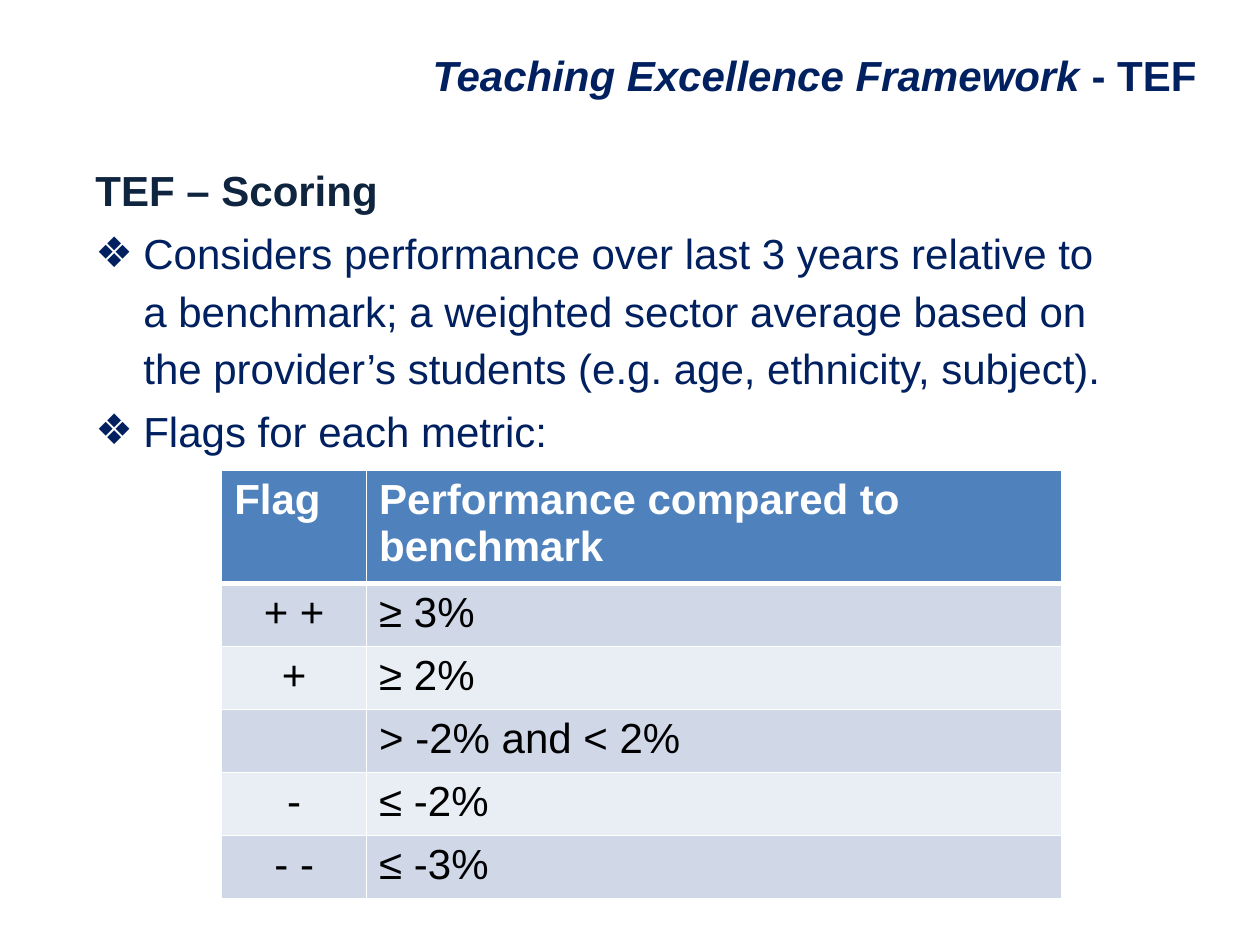
from lxml import etree
from pptx import Presentation
from pptx.dml.color import RGBColor
from pptx.enum.text import MSO_ANCHOR, PP_ALIGN
from pptx.oxml.ns import qn
from pptx.util import Inches, Pt

LEFT, CENTER = PP_ALIGN.LEFT, PP_ALIGN.CENTER
TOP = MSO_ANCHOR.TOP
NAVY, DARK, BLACK, WHITE = "002060", "0F243E", "000000", "FFFFFF"
HEADER_FILL = "4F81BD"
BAND_FILLS = ("D0D8E8", "E9EDF4")

FLAG_ROWS = [
    ("Flag", "Performance compared to benchmark"),
    ("+ +", "≥ 3%"),
    ("+", "≥ 2%"),
    ("", "> -2% and < 2%"),
    ("-", "≤ -2%"),
    ("- -", "≤ -3%"),
]


def rgb(value):
    return RGBColor.from_string(value)


class SlideBuilder:
    """Holds the text style and the slide being filled."""

    font_name = "Arial"
    font_size = Pt(24)

    def __init__(self, slide):
        self.slide = slide

    def text_box(self, left, top, width, height):
        shape = self.slide.shapes.add_textbox(
            Inches(left), Inches(top), Inches(width), Inches(height))
        shape.text_frame.word_wrap = True
        return shape.text_frame

    def run(self, paragraph, text, color, bold=False, italic=False):
        run = paragraph.add_run()
        run.text = text
        font = run.font
        font.name, font.size = self.font_name, self.font_size
        font.bold, font.italic = bold, italic
        font.color.rgb = rgb(color)

    def bullet(self, text_frame, text):
        paragraph = text_frame.add_paragraph()
        paragraph.line_spacing = 1.14
        paragraph.space_before = Pt(3)
        properties = paragraph._p.get_or_add_pPr()
        properties.set("marL", str(Inches(0.38)))
        properties.set("indent", str(-Inches(0.38)))
        etree.SubElement(properties, qn("a:buFont"), typeface=self.font_name)
        etree.SubElement(properties, qn("a:buChar"), char="❖")
        self.run(paragraph, text, NAVY)

    def cell_borders(self, cell, bottom_width, top_width):
        properties = cell._tc.get_or_add_tcPr()
        widths = (("L", 1), ("R", 1), ("T", top_width), ("B", bottom_width))
        for side, width in widths:
            line = etree.SubElement(properties, qn(f"a:ln{side}"), w=str(Pt(width)))
            fill = etree.SubElement(line, qn("a:solidFill"))
            etree.SubElement(fill, qn("a:srgbClr"), val=WHITE)

    def table(self, rows, left, top, column_widths, row_heights):
        table = self.slide.shapes.add_table(
            len(rows), len(column_widths), Inches(left), Inches(top),
            Inches(sum(column_widths)), Inches(sum(row_heights))).table
        for column, width in zip(table.columns, column_widths):
            column.width = Inches(width)
        for row_index, (texts, height) in enumerate(zip(rows, row_heights)):
            table.rows[row_index].height = Inches(height)
            header = row_index == 0
            for column_index, text in enumerate(texts):
                cell = table.cell(row_index, column_index)
                cell.vertical_anchor = TOP
                self.cell_borders(cell, 3 if header else 1, 3 if row_index == 1 else 1)
                cell.fill.solid()
                fill = HEADER_FILL if header else BAND_FILLS[(row_index - 1) % 2]
                cell.fill.fore_color.rgb = rgb(fill)
                paragraph = cell.text_frame.paragraphs[0]
                paragraph.alignment = LEFT if header or column_index else CENTER
                if text:
                    self.run(paragraph, text, WHITE if header else BLACK, bold=header)


def main():
    presentation = Presentation()
    presentation.slide_width, presentation.slide_height = Inches(10), Inches(7.5)
    builder = SlideBuilder(presentation.slides.add_slide(presentation.slide_layouts[6]))

    title = builder.text_box(3.3, 0.34, 6.33, 0.51).paragraphs[0]
    title.alignment = CENTER
    builder.run(title, "Teaching Excellence Framework ", NAVY, bold=True, italic=True)
    builder.run(title, "- TEF", NAVY, bold=True)

    body = builder.text_box(0.66, 1.26, 8.27, 2.43)
    builder.run(body.paragraphs[0], "TEF – Scoring", DARK, bold=True)
    builder.bullet(body, "Considers performance over last 3 years relative to a benchmark; "
                         "a weighted sector average based on the provider’s students "
                         "(e.g. age, ethnicity, subject).")
    builder.bullet(body, "Flags for each metric:")

    builder.table(FLAG_ROWS, 1.76, 3.73, (1.15, 5.52), [0.89] + [0.5] * 5)
    presentation.save("out.pptx")


if __name__ == "__main__":
    main()
